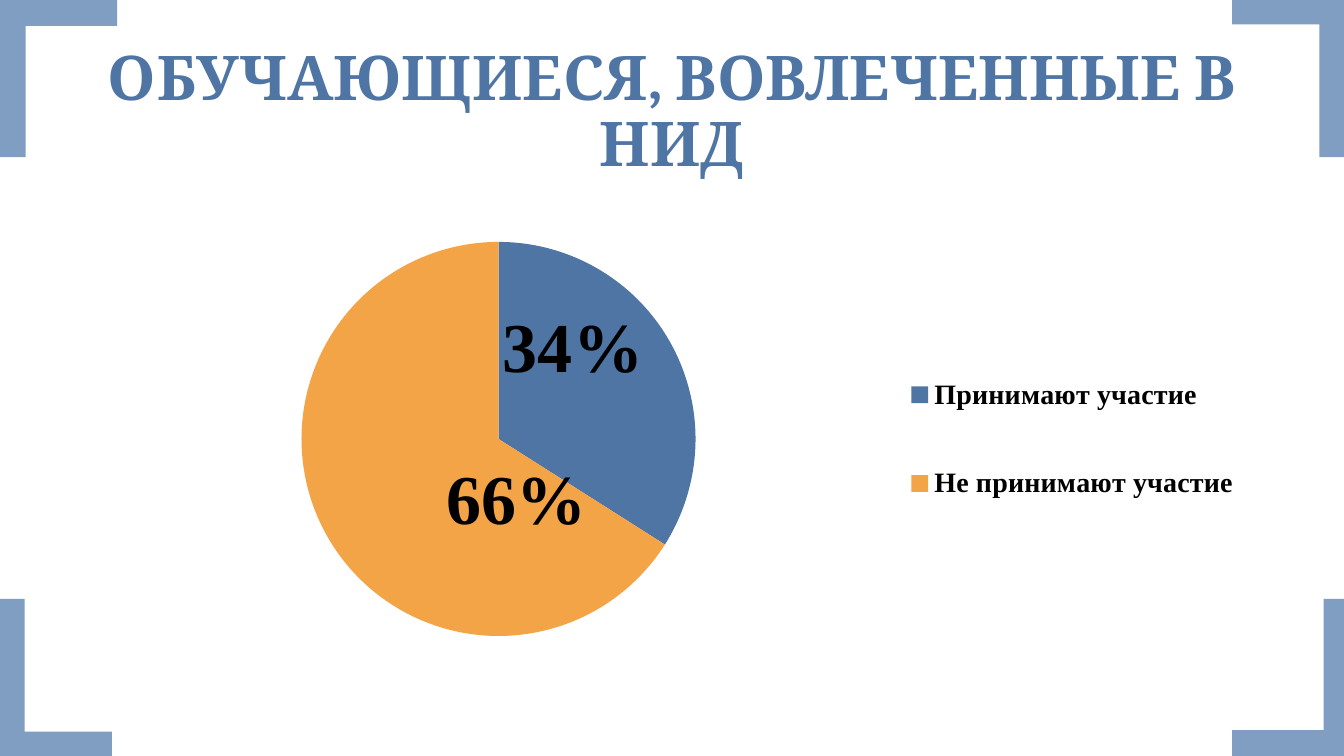
from lxml import etree
from pptx import Presentation
from pptx.chart.data import CategoryChartData
from pptx.dml.color import RGBColor
from pptx.enum.chart import XL_CHART_TYPE, XL_LABEL_POSITION, XL_LEGEND_POSITION
from pptx.enum.shapes import MSO_SHAPE
from pptx.enum.text import MSO_ANCHOR, PP_ALIGN
from pptx.oxml import parse_xml
from pptx.oxml.ns import qn
from pptx.util import Cm, Pt

PIE = XL_CHART_TYPE.PIE
LABEL_CENTER = XL_LABEL_POSITION.CENTER
LEGEND_RIGHT = XL_LEGEND_POSITION.RIGHT
CORNER = MSO_SHAPE.CORNER
MIDDLE = MSO_ANCHOR.MIDDLE
CENTER = PP_ALIGN.CENTER

COLORS = {"frame": "809EC2", "blue": "4E75A3", "orange": "F3A447", "black": "000000"}
CHART_NS = "http://schemas.openxmlformats.org/drawingml/2006/chart"
SLIDE_WIDTH, SLIDE_HEIGHT = 33.87, 19.05
CONTENT_LEFT, CONTENT_WIDTH = 2.34, 29.21


def color(name):
    return RGBColor.from_string(COLORS[name])


def format_font(font, size, name, fill="black", bold=True):
    font.size, font.name, font.bold = Pt(size), name, bold
    font.color.rgb = color(fill)


def add_text(slide, text, box, *, size, font, fill, outline=None, spacing=1.0):
    """Add a centred text box; outline is a width in points."""
    shape = slide.shapes.add_textbox(*map(Cm, box))
    frame = shape.text_frame
    frame.word_wrap, frame.vertical_anchor = True, MIDDLE
    paragraph = frame.paragraphs[0]
    paragraph.alignment, paragraph.line_spacing = CENTER, spacing
    run = paragraph.add_run()
    run.text = text
    format_font(run.font, size, font, fill)
    if outline:
        properties = run.font._element
        line = etree.Element(qn("a:ln"), w=str(int(Pt(outline))))
        solid = etree.SubElement(line, qn("a:solidFill"))
        etree.SubElement(solid, qn("a:srgbClr"), val=COLORS[fill])
        properties.insert(0, line)


def add_corner(slide, box, rotation):
    """Draw a corner bracket that covers the box after rotation."""
    left, top, width, height = box
    center_x, center_y = left + width / 2, top + height / 2
    if rotation % 180:
        width, height = height, width
    shape = slide.shapes.add_shape(
        CORNER, Cm(center_x - width / 2), Cm(center_y - height / 2), Cm(width), Cm(height))
    shape.rotation = rotation
    shape.adjustments[0], shape.adjustments[1] = 0.218, 0.221
    shape.shadow.inherit = False
    shape.fill.solid()
    shape.fill.fore_color.rgb = color("frame")
    shape.line.fill.background()


def add_frame(slide, box):
    left, top, width, height = box
    narrow, wide, tall = 2.82, 2.95, 3.96
    right, bottom = left + width - narrow, top + height - tall
    add_corner(slide, (left, bottom, narrow, tall), 0)
    add_corner(slide, (right, top, narrow, tall), 180)
    add_corner(slide, (right, bottom, wide, tall), 270)
    add_corner(slide, (left, top, wide, tall), 90)


def manual_layout(x, y, width=None, height=None, inner=False):
    """Build a layout in fractions of the chart; without a size it is an offset."""
    values = []
    if inner:
        values.append(("layoutTarget", "inner"))
    if width:
        values += [("xMode", "edge"), ("yMode", "edge")]
    values += [("x", x), ("y", y)]
    if width:
        values += [("w", width), ("h", height)]
    items = "".join(f'<c:{tag} val="{value}"/>' for tag, value in values)
    return parse_xml(f'<c:layout xmlns:c="{CHART_NS}"><c:manualLayout>{items}'
                     '</c:manualLayout></c:layout>')


def replace_layout(parent, layout, index):
    for old in parent.findall(qn("c:layout")):
        parent.remove(old)
    parent.insert(index, layout)


def add_participation_chart(slide, box):
    data = CategoryChartData(number_format="0%")
    data.categories = ["Принимают участие", "Не принимают участие"]
    data.add_series("Series 1", (0.34, 0.66))
    chart = slide.shapes.add_chart(PIE, *map(Cm, box), data).chart
    chart.has_title = False
    format_font(chart.font, 18, "Calibri", bold=False)

    chart.has_legend = True
    legend = chart.legend
    legend.position, legend.include_in_layout = LEGEND_RIGHT, False
    format_font(legend.font, 20, "Times New Roman")
    replace_layout(legend._element, manual_layout(0.7, 0.25, 0.29, 0.49), 1)
    plot_area = chart._chartSpace.chart.plotArea
    replace_layout(plot_area, manual_layout(0.18, 0.08, 0.34, 0.83, inner=True), 0)

    plot = chart.plots[0]
    plot.vary_by_categories = True
    plot.has_data_labels = True
    labels = plot.data_labels
    labels.show_value, labels.show_percentage = True, False
    labels.number_format, labels.number_format_is_linked = "0%", False
    format_font(labels.font, 50, "Times New Roman")

    slices = [("blue", -0.01, -0.09), ("orange", 0.09, 0.03)]
    for index, (fill, shift_x, shift_y) in enumerate(slices):
        point = plot.series[0].points[index]
        point.format.fill.solid()
        point.format.fill.fore_color.rgb = color(fill)
        point.format.line.fill.background()
        label = point.data_label
        format_font(label.font, 50, "Times New Roman")
        label.position = LABEL_CENTER
        element = label._dLbl
        replace_layout(element, manual_layout(shift_x, shift_y), 1)
        element.insert(2, etree.Element(qn("c:numFmt"), formatCode="0%", sourceLinked="0"))


def main():
    presentation = Presentation()
    presentation.slide_width, presentation.slide_height = Cm(SLIDE_WIDTH), Cm(SLIDE_HEIGHT)
    slide = presentation.slides.add_slide(presentation.slide_layouts[6])
    add_frame(slide, (0, 0, SLIDE_WIDTH, SLIDE_HEIGHT))
    add_text(slide, "ОБУЧАЮЩИЕСЯ, ВОВЛЕЧЕННЫЕ В НИД", (CONTENT_LEFT, 1.02, CONTENT_WIDTH, 3.68),
             size=44, font="Cambria", fill="blue", outline=2.48, spacing=0.9)
    add_participation_chart(slide, (CONTENT_LEFT, 5.08, CONTENT_WIDTH, 12.09))
    presentation.save("out.pptx")


if __name__ == "__main__":
    main()
